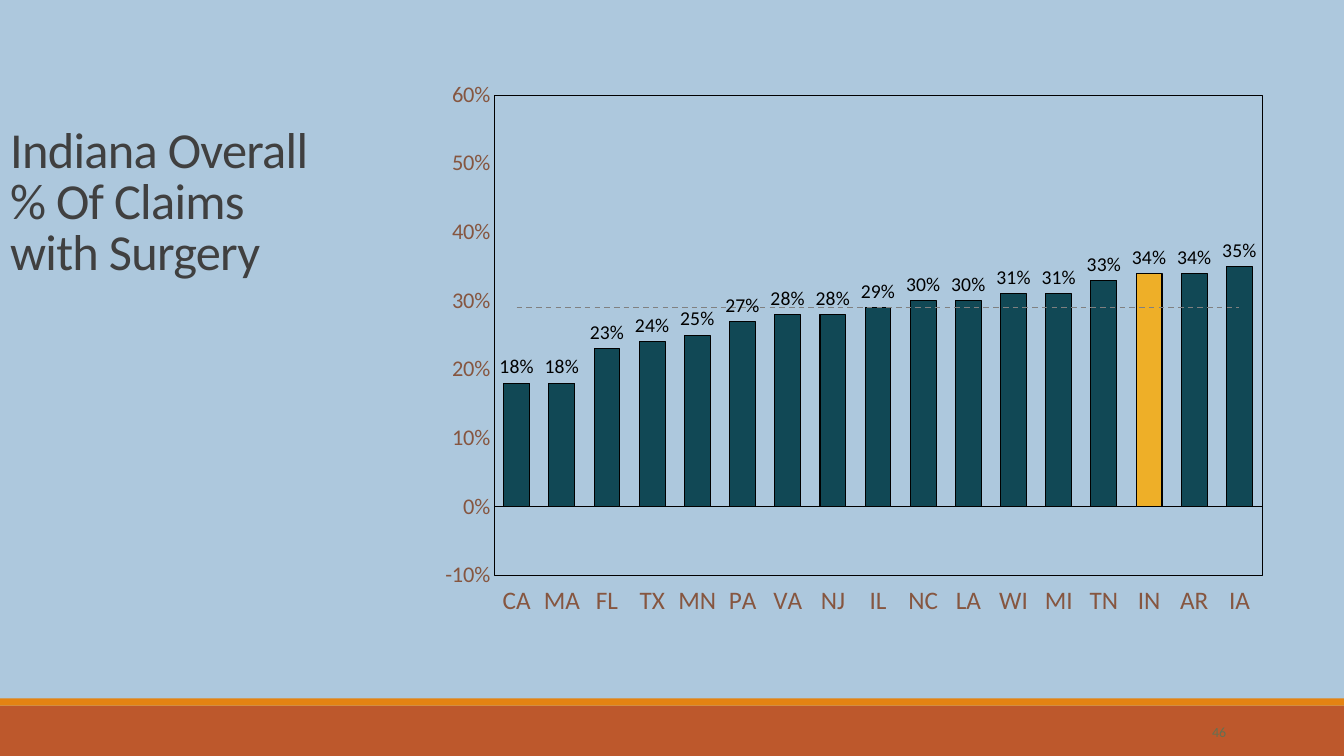
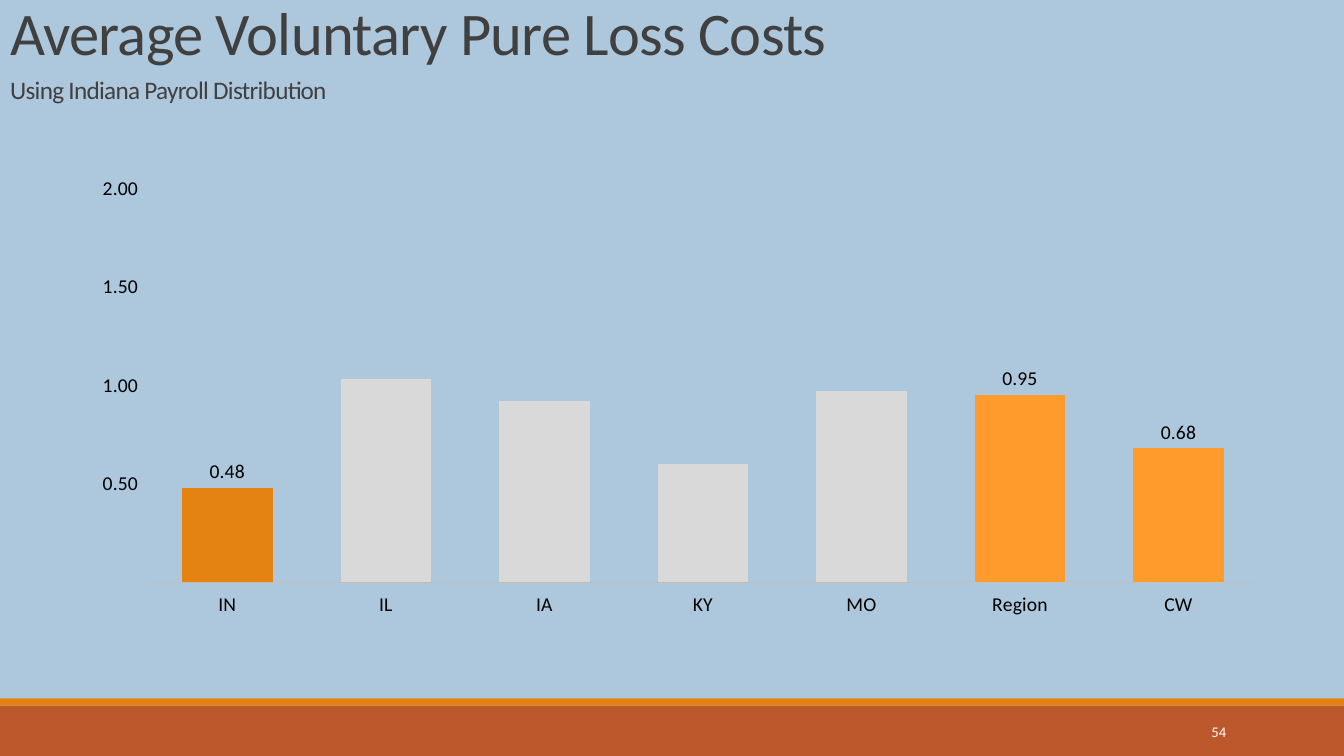
from lxml import etree
from pptx import Presentation
from pptx.chart.data import CategoryChartData
from pptx.dml.color import RGBColor
from pptx.enum.chart import XL_CHART_TYPE, XL_LABEL_POSITION, XL_MARKER_STYLE, XL_TICK_LABEL_POSITION, XL_TICK_MARK
from pptx.enum.dml import MSO_LINE
from pptx.enum.shapes import MSO_SHAPE
from pptx.enum.text import MSO_ANCHOR, MSO_AUTO_SIZE, PP_ALIGN
from pptx.oxml import parse_xml
from pptx.oxml.ns import nsdecls, qn
from pptx.util import Inches, Pt

COLUMNS = XL_CHART_TYPE.COLUMN_CLUSTERED
OUTSIDE = XL_LABEL_POSITION.OUTSIDE_END
NO_MARKER = XL_MARKER_STYLE.NONE
LOW = XL_TICK_LABEL_POSITION.LOW
NO_TICK, TICK_OUT = XL_TICK_MARK.NONE, XL_TICK_MARK.OUTSIDE
DASH = MSO_LINE.DASH
RECTANGLE = MSO_SHAPE.RECTANGLE
BOTTOM, MIDDLE = MSO_ANCHOR.BOTTOM, MSO_ANCHOR.MIDDLE
NO_AUTOFIT = MSO_AUTO_SIZE.NONE
LEFT, RIGHT = PP_ALIGN.LEFT, PP_ALIGN.RIGHT

FONT = "Calibri"
SKY, RUST, ORANGE = "ADC8DD", "BD582C", "E48312"
LIGHT_ORANGE, GOLD, TEAL = "FF9B2D", "EEAF28", "114855"
TITLE_GREY, BROWN, OLIVE = "404040", "865640", "637052"
BLACK, WHITE, GREY = "000000", "FFFFFF", "808080"
PALE_GREY, AXIS_GREY = "D9D9D9", "BFBFBF"
PERCENT, HIDE_ZERO = "0%", '0.00;;""'


def color(value):
    return RGBColor.from_string(value)


def set_font(font, size, value):
    font.name = FONT
    font.size = Pt(size)
    font.color.rgb = color(value)


def set_line(line, value, width):
    line.color.rgb = color(value)
    line.width = Pt(width)


class Slides:
    def __init__(self):
        self.deck = Presentation()
        self.deck.slide_width = Inches(13.33)
        self.deck.slide_height = Inches(7.5)
        fill = self.deck.slide_master.background.fill
        fill.solid()
        fill.fore_color.rgb = color(SKY)
        self.page = None

    def add_page(self, number, number_size, number_color):
        self.page = self.deck.slides.add_slide(self.deck.slide_layouts[5])
        self.add_band(7, 0.5, RUST)
        self.add_band(6.93, 0.07, ORANGE)
        box = self.page.shapes.add_textbox(Inches(10.83), Inches(7.06), Inches(1.43), Inches(0.4))
        frame = box.text_frame
        frame.word_wrap = True
        frame.vertical_anchor = MIDDLE
        para = frame.paragraphs[0]
        para.alignment = RIGHT
        span = para.add_run()
        span.text = number
        set_font(span.font, number_size, number_color)

    def add_band(self, top, height, value):
        band = self.page.shapes.add_shape(RECTANGLE, 0, Inches(top), self.deck.slide_width, Inches(height))
        band.shadow.inherit = False
        band.fill.solid()
        band.fill.fore_color.rgb = color(value)
        band.line.fill.background()

    def add_title(self, top, width, height, lines):
        title = self.page.shapes.title
        title.left, title.top = Inches(0), Inches(top)
        title.width, title.height = Inches(width), Inches(height)
        frame = title.text_frame
        frame.word_wrap = True
        frame.auto_size = NO_AUTOFIT
        frame.vertical_anchor = BOTTOM
        for index, (text, size) in enumerate(lines):
            para = frame.add_paragraph() if index else frame.paragraphs[0]
            para.alignment = LEFT
            para.line_spacing = 0.85
            para.space_before = Pt(8 if index else 0)
            span = para.add_run()
            span.text = text
            set_font(span.font, size, TITLE_GREY)
            span.font._element.set("spc", "-50")

    def add_column_chart(self, place, plot_area, categories, series, overlap=0):
        data = CategoryChartData()
        data.categories = categories
        for index, (values, _) in enumerate(series, 1):
            data.add_series(f"Series {index}", values)
        chart = self.page.shapes.add_chart(COLUMNS, *map(Inches, place), data).chart
        chart.has_title = False
        chart.has_legend = False
        set_font(chart.font, 14, BLACK)
        plot = chart.plots[0]
        plot.vary_by_categories = False
        plot.gap_width = 75
        plot.overlap = overlap
        for columns, (_, value) in zip(plot.series, series):
            columns.invert_if_negative = False
            columns.format.fill.solid()
            columns.format.fill.fore_color.rgb = color(value)
        self.place_plot(chart, plot_area)
        return chart

    def place_plot(self, chart, plot_area):
        area = chart._chartSpace.chart.plotArea
        for layout in area.findall(qn("c:layout")):
            area.remove(layout)
        sizes = "".join(f'<c:{key} val="{value}"/>' for key, value in zip("xywh", plot_area))
        area.insert(0, parse_xml(
            f'<c:layout {nsdecls("c")}><c:manualLayout><c:layoutTarget val="inner"/>'
            f'<c:xMode val="edge"/><c:yMode val="edge"/>{sizes}</c:manualLayout></c:layout>'))

    def style_axes(self, chart, limits, step, number_format, text_color, sizes):
        value_axis = chart.value_axis
        value_axis.minimum_scale, value_axis.maximum_scale = limits
        value_axis.major_unit = step
        value_axis.has_major_gridlines = False
        value_axis.tick_labels.number_format = number_format
        value_axis.tick_labels.number_format_is_linked = False
        chart.category_axis.tick_label_position = LOW
        for axis, size in zip((chart.category_axis, value_axis), sizes):
            axis.major_tick_mark = NO_TICK
            axis.minor_tick_mark = NO_TICK
            set_font(axis.tick_labels.font, size, text_color)

    def label_columns(self, columns, number_format):
        labels = columns.data_labels
        labels.show_value = True
        labels.position = OUTSIDE
        labels.number_format = number_format
        labels.number_format_is_linked = False
        set_font(labels.font, 14, BLACK)

    def frame_plot(self, chart, value):
        chart._chartSpace.chart.plotArea.append(parse_xml(
            f'<c:spPr {nsdecls("c", "a")}><a:noFill/><a:ln w="9525"><a:solidFill>'
            f'<a:srgbClr val="{value}"/></a:solidFill></a:ln></c:spPr>'))

    def turn_last_series_into_line(self, chart, value):
        bars = chart.plots[0]._element
        series = bars.findall(qn("c:ser"))[-1]
        for tag in ("c:invertIfNegative", "c:spPr"):
            series.remove(series.find(qn(tag)))
        lines = parse_xml(
            f'<c:lineChart {nsdecls("c")}><c:grouping val="standard"/><c:varyColors val="0"/></c:lineChart>')
        lines.append(series)
        etree.SubElement(lines, qn("c:marker")).set("val", "1")
        for axis in bars.findall(qn("c:axId")):
            etree.SubElement(lines, qn("c:axId")).set("val", axis.get("val"))
        bars.addnext(lines)
        average = chart.plots[1].series[0]
        average.smooth = False
        average.marker.style = NO_MARKER
        set_line(average.format.line, value, 1)
        average.format.line.dash_style = DASH


def add_surgery_page(slides):
    slides.add_page("46", 10, OLIVE)
    slides.add_title(0.54, 3.37, 2.3, [("Indiana Overall % Of Claims with Surgery", 36)])
    states = "CA MA FL TX MN PA VA NJ IL NC LA WI MI TN IN AR IA".split()
    shares = [0.18, 0.18, 0.23, 0.24, 0.25, 0.27, 0.28, 0.28, 0.29,
              0.3, 0.3, 0.31, 0.31, 0.33, 0.34, 0.34, 0.35]
    chart = slides.add_column_chart(
        (4.1, 0.7, 8.52, 6.07), (0.094, 0.04, 0.894, 0.785), states,
        [(shares, TEAL), ([0.29] * len(states), GREY)])
    slides.style_axes(chart, (-0.1, 0.6), 0.1, PERCENT, BROWN, (18, 16))
    for axis in (chart.category_axis, chart.value_axis):
        set_line(axis.format.line, BLACK, 0.75)
    slides.turn_last_series_into_line(chart, GREY)
    slides.frame_plot(chart, BLACK)
    columns = chart.plots[0].series[0]
    set_line(columns.format.line, BLACK, 0.75)
    slides.label_columns(columns, PERCENT)
    indiana = columns.points[states.index("IN")].format
    indiana.fill.solid()
    indiana.fill.fore_color.rgb = color(GOLD)
    set_line(indiana.line, BLACK, 0.75)


def add_loss_cost_page(slides):
    slides.add_page("54", 10.5, WHITE)
    slides.add_title(0, 11.89, 1.09, [
        ("Average Voluntary Pure Loss Costs", 43.2),
        ("Using Indiana Payroll Distribution", 18)])
    chart = slides.add_column_chart(
        (0.65, 1.75, 12.03, 4.52), (0.068, 0.026, 0.915, 0.865),
        ["IN", "IL", "IA", "KY", "MO", "Region", "CW"],
        [([0.48] + [None] * 6, ORANGE),
         ([None, 1.03, 0.92, 0.6, 0.97, 0, 0], PALE_GREY),
         ([0] * 5 + [0.95, 0.68], LIGHT_ORANGE)],
        overlap=100)
    slides.style_axes(chart, (0, 2), 0.5, HIDE_ZERO, BLACK, (14, 14))
    set_line(chart.category_axis.format.line, AXIS_GREY, 1)
    chart.value_axis.major_tick_mark = TICK_OUT
    chart.value_axis.format.line.fill.background()
    indiana, _, benchmarks = chart.plots[0].series
    for columns in (indiana, benchmarks):
        slides.label_columns(columns, HIDE_ZERO)


def main():
    slides = Slides()
    add_surgery_page(slides)
    add_loss_cost_page(slides)
    slides.deck.save("out.pptx")


if __name__ == "__main__":
    main()
